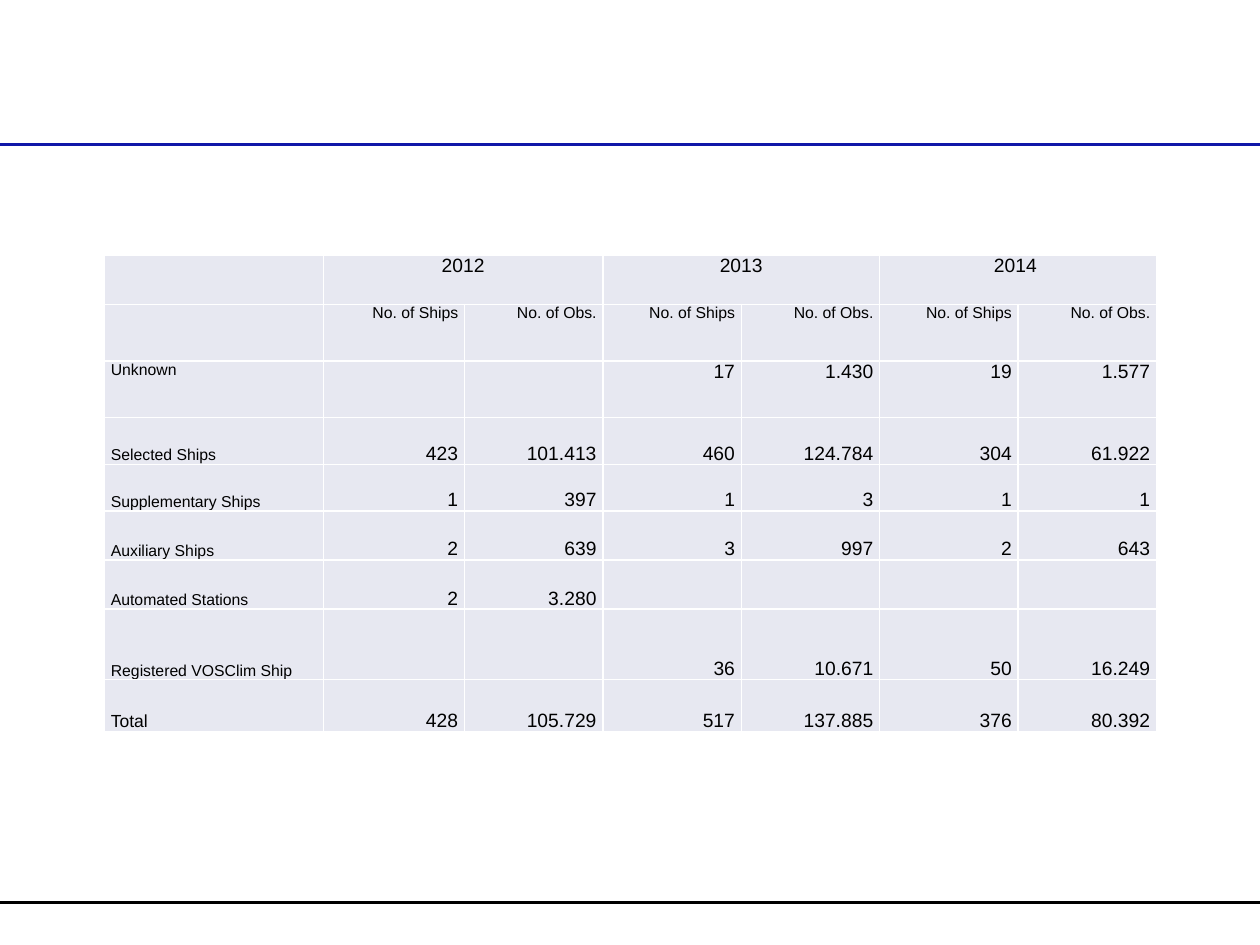
from pptx import Presentation
from pptx.dml.color import RGBColor
from pptx.enum.text import MSO_ANCHOR as Anchor, PP_ALIGN as Align
from pptx.oxml import parse_xml
from pptx.oxml.ns import nsdecls
from pptx.util import Inches, Pt

WIDTH, HEIGHT = Inches(10), Inches(7.5)
TABLE_BOX = (0.083, 0.27, 0.835, 0.504)
RULES = [(0.955, "000000", 1.25), (0.153, "1017A8", 1.75)]
COLUMN_SHARES = [1.74, 1.12] + [1.1] * 5
ROW_SHARES = [0.39, 0.45, 0.45, 0.37, 0.37, 0.39, 0.39, 0.56, 0.41]
CELL_FILL, BORDER, TEXT = "E7E8F1", "FFFFFF", "000000"
LABEL_SIZE, TOTAL_SIZE, VALUE_SIZE = 9, 10, 11
YEARS = ["2012", "2013", "2014 "]
MEASURES = ["No. of Ships", "No. of Obs."]
SHIP_ROWS = [
    ["Unknown", "", "", "17", "1.430", "19", "1.577"],
    ["Selected Ships", "423", "101.413", "460", "124.784", "304", "61.922"],
    ["Supplementary Ships", "1", "397", "1", "3", "1", "1"],
    ["Auxiliary Ships", "2", "639", "3", "997", "2", "643"],
    ["Automated Stations", "2", "3.280", "", "", "", ""],
    ["Registered VOSClim Ship", "", "", "36", "10.671", "50", "16.249"],
    ["Total", "428", "105.729", "517", "137.885", "376", "80.392"],
]


def color(value):
    """Return the colour for a hex string."""
    return RGBColor.from_string(value)


def set_format(target, values):
    """Set each named attribute on the target."""
    for name, value in values.items():
        setattr(target, name, value)


def add_rule(slide, share, line_color, weight):
    """Draw a line across the slide at a share of its height."""
    top = round(HEIGHT * share)
    rule = slide.shapes.add_connector(1, 0, top, WIDTH, top)
    rule.line.color.rgb = color(line_color)
    rule.line.width = Pt(weight)
    rule._element.spPr.append(parse_xml(f"<a:effectLst {nsdecls('a')}/>"))


def style_cell(cell):
    """Give a cell its margins, fill and borders."""
    set_format(cell, {"margin_left": Inches(0.05), "margin_right": Inches(0.05),
                      "margin_top": 0, "margin_bottom": 0})
    cell.fill.solid()
    cell.fill.fore_color.rgb = color(CELL_FILL)
    properties = cell._tc.get_or_add_tcPr()
    for index, side in enumerate(["lnL", "lnR", "lnT", "lnB"]):
        properties.insert(index, parse_xml(
            f'<a:{side} {nsdecls("a")} w="{Pt(1)}"><a:solidFill>'
            f'<a:srgbClr val="{BORDER}"/></a:solidFill></a:{side}>'))


def write_cell(cell, text, size, alignment, anchor=Anchor.TOP):
    """Write formatted text in a cell, leaving it empty without text."""
    cell.vertical_anchor = anchor
    if not text:
        return
    paragraph = cell.text_frame.paragraphs[0]
    paragraph.alignment = alignment
    run = paragraph.add_run()
    run.text = text
    set_format(run.font, {"name": "Arial", "size": Pt(size), "bold": False})
    run.font.color.rgb = color(TEXT)


def write_header(table):
    """Write the merged years and the measures below them."""
    for index, year in enumerate(YEARS):
        first = 1 + index * len(MEASURES)
        table.cell(0, first).merge(table.cell(0, first + len(MEASURES) - 1))
        write_cell(table.cell(0, first), year, VALUE_SIZE, Align.CENTER)
        for offset, measure in enumerate(MEASURES):
            write_cell(table.cell(1, first + offset), measure, LABEL_SIZE, Align.RIGHT)


def write_ship_rows(table):
    """Write the label and the values of each kind of ship."""
    for row, (label, *values) in enumerate(SHIP_ROWS, start=2):
        is_first = row == 2
        anchor = Anchor.TOP if is_first else Anchor.BOTTOM
        alignment = Align.JUSTIFY if is_first else Align.LEFT
        size = TOTAL_SIZE if label == "Total" else LABEL_SIZE
        write_cell(table.cell(row, 0), label, size, alignment, anchor)
        for column, value in enumerate(values, start=1):
            write_cell(table.cell(row, column), value, VALUE_SIZE, Align.RIGHT, anchor)


def add_ship_table(slide, box):
    """Place the table of ships and observations in a box of slide shares."""
    left, top, width, height = (
        round(share * length) for share, length in zip(box, (WIDTH, HEIGHT) * 2))
    table = slide.shapes.add_table(
        len(ROW_SHARES), len(COLUMN_SHARES), left, top, width, height).table
    set_format(table, {"first_row": False, "horz_banding": False})
    for column, share in zip(table.columns, COLUMN_SHARES):
        column.width = round(width * share / sum(COLUMN_SHARES))
    for row, share in zip(table.rows, ROW_SHARES):
        row.height = round(height * share / sum(ROW_SHARES))
    for cell in table.iter_cells():
        style_cell(cell)
    write_header(table)
    write_ship_rows(table)


def main():
    """Build and save the presentation."""
    presentation = Presentation()
    set_format(presentation, {"slide_width": WIDTH, "slide_height": HEIGHT})
    slide = presentation.slides.add_slide(presentation.slide_layouts[6])
    for rule in RULES:
        add_rule(slide, *rule)
    add_ship_table(slide, TABLE_BOX)
    presentation.save("out.pptx")


if __name__ == "__main__":
    main()
